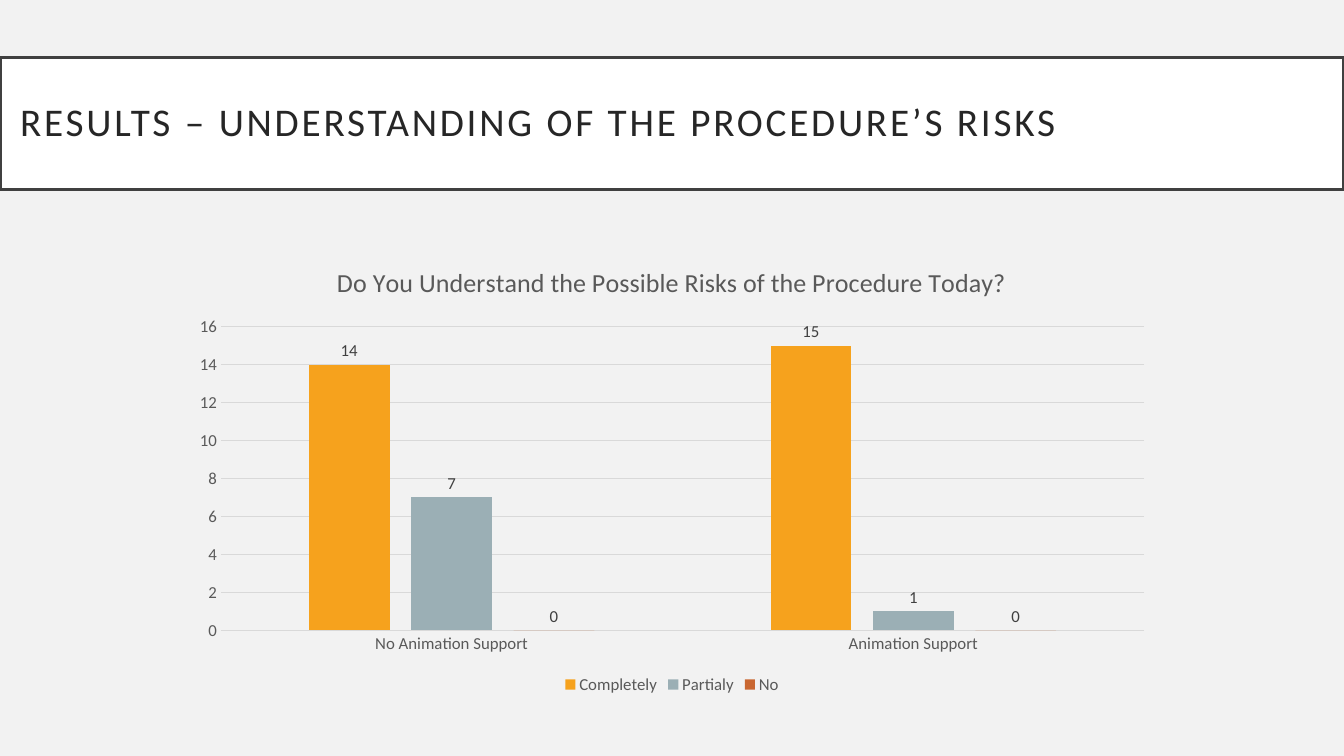
from dataclasses import dataclass

from pptx import Presentation
from pptx.chart.data import CategoryChartData
from pptx.dml.color import RGBColor as RGB
from pptx.enum.chart import (XL_CHART_TYPE as CHART, XL_LABEL_POSITION as LABEL,
                             XL_LEGEND_POSITION as LEGEND, XL_TICK_MARK as TICK)
from pptx.enum.shapes import MSO_SHAPE as SHAPE
from pptx.enum.text import MSO_ANCHOR as ANCHOR, PP_ALIGN as ALIGN
from pptx.util import Inches, Pt


@dataclass(frozen=True)
class Theme:
    font: str = "Calibri"
    back: str = "F2F2F2"
    panel: str = "FFFFFF"
    border: str = "404040"
    heading: str = "262626"
    text: str = "595959"
    value: str = "404040"
    grid: str = "D9D9D9"
    series: tuple = ("F6A21D", "9BAFB5", "C96731")
    heading_size: float = 28
    chart_title_size: float = 18.6
    text_size: float = 12


class Deck:
    def __init__(self, theme, width=13.33, height=7.5):
        self.t = theme
        self.prs = Presentation()
        self.prs.slide_width, self.prs.slide_height = Inches(width), Inches(height)
        self.s = self.prs.slides.add_slide(self.prs.slide_layouts[6])
        self.paint(self.s.background.fill, theme.back)

    def box(self, x, y, w, h):
        """Turn shares of the slide's size into lengths."""
        sw, sh = self.prs.slide_width, self.prs.slide_height
        return int(x * sw), int(y * sh), int(w * sw), int(h * sh)

    def paint(self, fill, color):
        fill.solid()
        fill.fore_color.rgb = RGB.from_string(color)

    def rule(self, line, color, width):
        self.paint(line.fill, color)
        line.width = Pt(width)

    def style(self, font, size, color):
        font.name, font.size, font.bold = self.t.font, Pt(size), False
        font.color.rgb = RGB.from_string(color)

    def banner(self, text, *area):
        sp = self.s.shapes.add_shape(SHAPE.RECTANGLE, *self.box(*area))
        sp.shadow.inherit = False
        self.paint(sp.fill, self.t.panel)
        self.rule(sp.line, self.t.border, 2.5)
        tf = sp.text_frame
        tf.word_wrap = True
        tf.vertical_anchor = ANCHOR.MIDDLE
        tf.margin_left = tf.margin_right = tf.margin_top = tf.margin_bottom = Inches(0.2)
        p = tf.paragraphs[0]
        p.alignment, p.line_spacing = ALIGN.LEFT, 0.9
        r = p.add_run()
        r.text = text
        self.style(r.font, self.t.heading_size, self.t.heading)
        r.font._element.set("spc", "200")  # letter spacing of 2 pt

    def columns(self, title, cats, series, *area):
        t = self.t
        data = CategoryChartData()
        data.categories = cats
        for name, values in series.items():
            data.add_series(name, values)
        chart = self.s.shapes.add_chart(
            CHART.COLUMN_CLUSTERED, *self.box(*area), data).chart
        self.style(chart.font, t.text_size, t.text)

        # Title and legend
        chart.has_title = True
        r = chart.chart_title.text_frame.paragraphs[0].add_run()
        r.text = title
        self.style(r.font, t.chart_title_size, t.text)
        chart.chart_title.include_in_layout = False
        chart.has_legend = True
        chart.legend.position = LEGEND.BOTTOM
        chart.legend.include_in_layout = False
        self.style(chart.legend.font, t.text_size, t.text)

        # Axes
        for axis in (chart.category_axis, chart.value_axis):
            axis.major_tick_mark = axis.minor_tick_mark = TICK.NONE
            self.style(axis.tick_labels.font, t.text_size, t.text)
        self.rule(chart.category_axis.format.line, t.grid, 0.75)
        chart.value_axis.format.line.fill.background()
        self.rule(chart.value_axis.major_gridlines.format.line, t.grid, 0.75)

        # Columns and their values
        plot = chart.plots[0]
        plot.vary_by_categories = False
        plot.gap_width, plot.overlap = 219, -27
        for ser, color in zip(plot.series, t.series):
            self.paint(ser.format.fill, color)
            labels = ser.data_labels
            labels.show_value = True
            labels.position = LABEL.OUTSIDE_END
            self.style(labels.font, t.text_size, t.value)


def main():
    deck = Deck(Theme())
    deck.banner("RESULTS – UNDERSTANDING OF THE PROCEDURE’S RISKS",
                0, 0.076, 1, 0.175)
    deck.columns("Do You Understand the Possible Risks of the Procedure Today?",
                 ["No Animation Support", "Animation Support"],
                 {"Completely": (14, 15), "Partialy": (7, 1), "No": (0, 0)},
                 0.134, 0.324, 0.732, 0.6)
    deck.prs.save("out.pptx")


if __name__ == "__main__":
    main()
